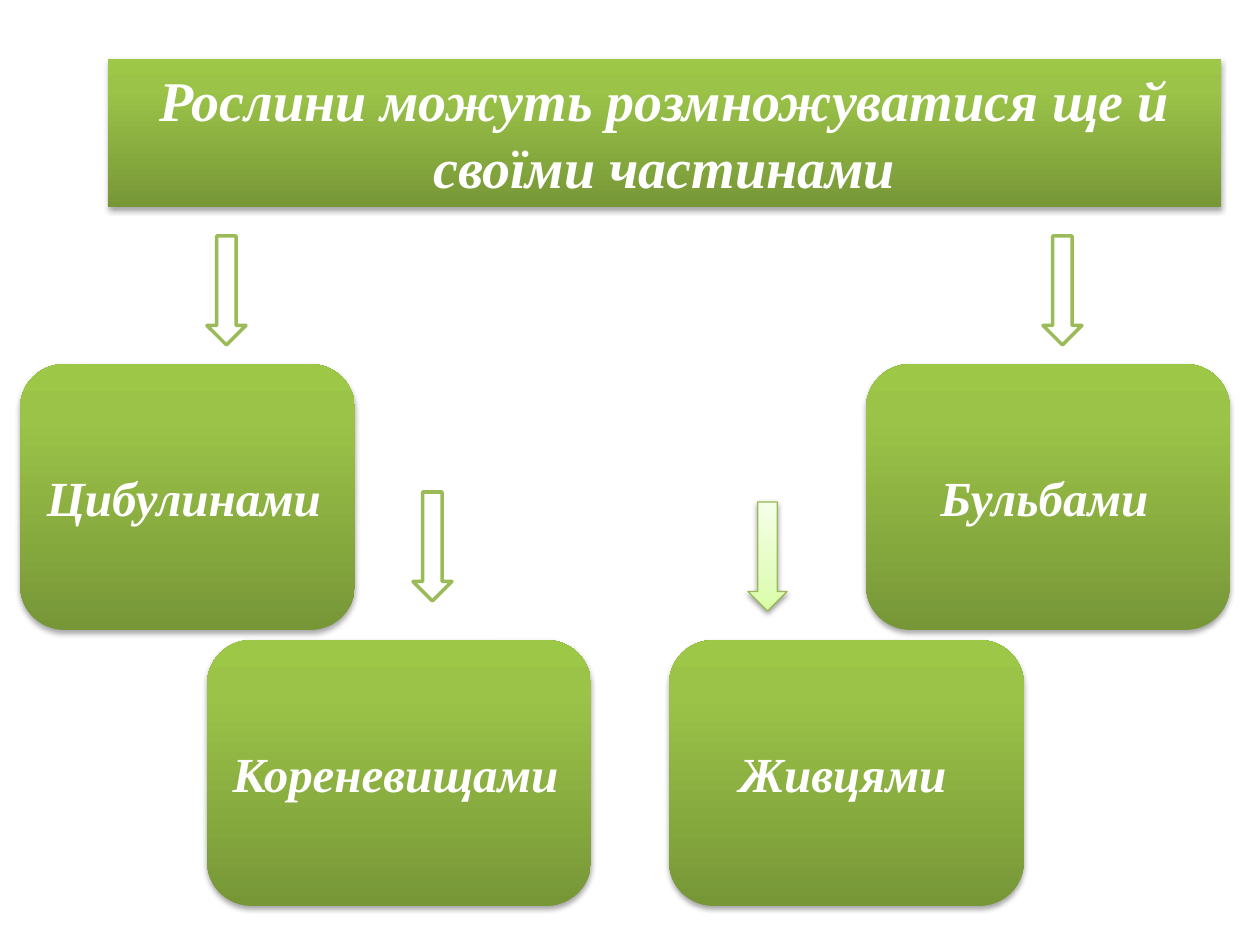
import pptx
import pptx.util
import pptx.oxml
import pptx.oxml.ns
import pptx.dml.color
import pptx.enum.shapes
import pptx.enum.text

PX = 914400 / 126
COLORS = {
    "white": "FFFFFF",
    "outline": "9BBB59",
    "pale_outline": "98B955",
    "shadow": "000000",
}
GREEN = [(0, "779737"), (80, "9BC348"), (100, "9DC746")]
PALE = [(0, "DAFDA7"), (35, "E4FCC2"), (100, "F5FFE7")]
NAMESPACE = pptx.oxml.ns.nsdecls("a")


def add_depth(shape, stops, opacity, distance):
    shape.fill.gradient()
    properties = shape.fill._xPr
    stop_xml = "".join(
        f'<a:gs pos="{position * 1000}"><a:srgbClr val="{color}"/></a:gs>'
        for position, color in stops
    )
    gradient = pptx.oxml.parse_xml(
        f'<a:gradFill {NAMESPACE} rotWithShape="1"><a:gsLst>{stop_xml}</a:gsLst>'
        '<a:lin ang="16200000" scaled="0"/></a:gradFill>'
    )
    properties.replace(properties.find(pptx.oxml.ns.qn("a:gradFill")), gradient)
    shape.shadow.inherit = False
    effects = properties.find(pptx.oxml.ns.qn("a:effectLst"))
    effects.append(pptx.oxml.parse_xml(
        f'<a:outerShdw {NAMESPACE} blurRad="40000" dist="{distance}" dir="5400000" '
        f'rotWithShape="0"><a:srgbClr val="{COLORS["shadow"]}">'
        f'<a:alpha val="{opacity * 1000}"/></a:srgbClr></a:outerShdw>'
    ))


def style_span(span, size, font="Times New Roman", strong=True):
    span.font.name = font
    span.font.size = pptx.util.Pt(size)
    span.font.bold = strong
    span.font.italic = strong
    span.font.color.rgb = pptx.dml.color.RGBColor.from_string(COLORS["white"])


deck = pptx.Presentation()
deck.slide_width = int(1260 * PX)
deck.slide_height = int(945 * PX)
page = deck.slides.add_slide(deck.slide_layouts[5])
shape_kind = pptx.enum.shapes.MSO_SHAPE

title = page.shapes.title
title.left, title.top, title.width, title.height = [
    int(length * PX) for length in (108, 59, 1113, 148)
]
title.text_frame.text = "Рослини можуть розмножуватися ще й своїми частинами"
title.text_frame.auto_size = pptx.enum.text.MSO_AUTO_SIZE.NONE
title.line.fill.background()
add_depth(title, GREEN, 35, 23000)
style_span(title.text_frame.paragraphs[0].runs[0], 32)

for label, left, top, width in [
    ("Цибулинами", 20, 364, 335),
    ("Кореневищами", 207, 640, 384),
    ("Бульбами", 866, 364, 364),
    ("Живцями", 669, 640, 355),
]:
    box = page.shapes.add_shape(
        shape_kind.ROUNDED_RECTANGLE,
        *[int(length * PX) for length in (left, top, width, 266)],
    )
    box.line.fill.background()
    add_depth(box, GREEN, 35, 23000)
    box.text_frame.word_wrap = True
    box.text_frame.vertical_anchor = pptx.enum.text.MSO_ANCHOR.MIDDLE
    para = box.text_frame.paragraphs[0]
    para.alignment = pptx.enum.text.PP_ALIGN.CENTER
    para.text = label
    style_span(para.runs[0], 28)
    space = para.add_run()
    space.text = " "
    style_span(space, 18, "Calibri", False)

for left, top, pale in [
    (207, 236, False),
    (413, 492, False),
    (1043, 236, False),
    (748, 502, True),
]:
    arrow = page.shapes.add_shape(
        shape_kind.DOWN_ARROW,
        *[int(length * PX) for length in (left, top, 39, 109)],
    )
    outline = COLORS["pale_outline" if pale else "outline"]
    arrow.line.color.rgb = pptx.dml.color.RGBColor.from_string(outline)
    arrow.line.width = pptx.util.Pt(0.75 if pale else 2)
    if pale:
        add_depth(arrow, PALE, 38, 20000)
    else:
        arrow.shadow.inherit = False
        arrow.fill.solid()
        arrow.fill.fore_color.rgb = pptx.dml.color.RGBColor.from_string(COLORS["white"])

deck.save("out.pptx")
